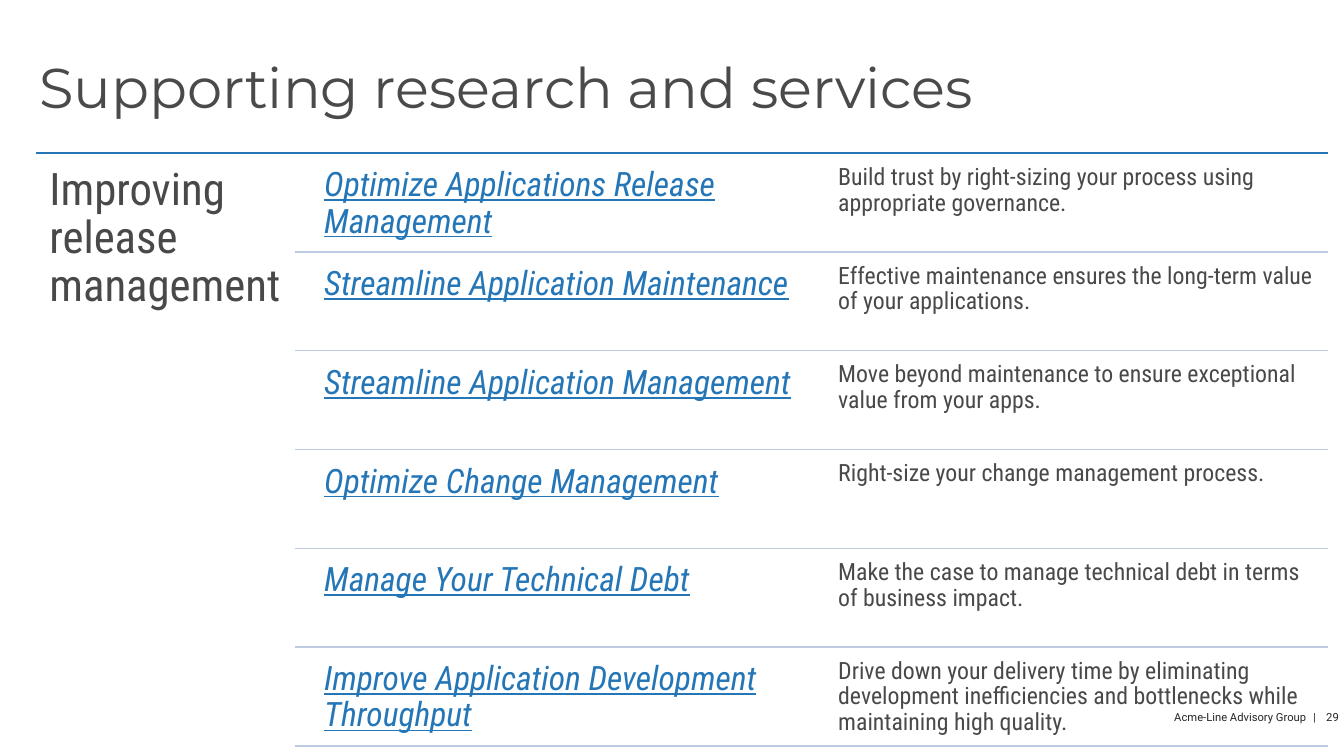
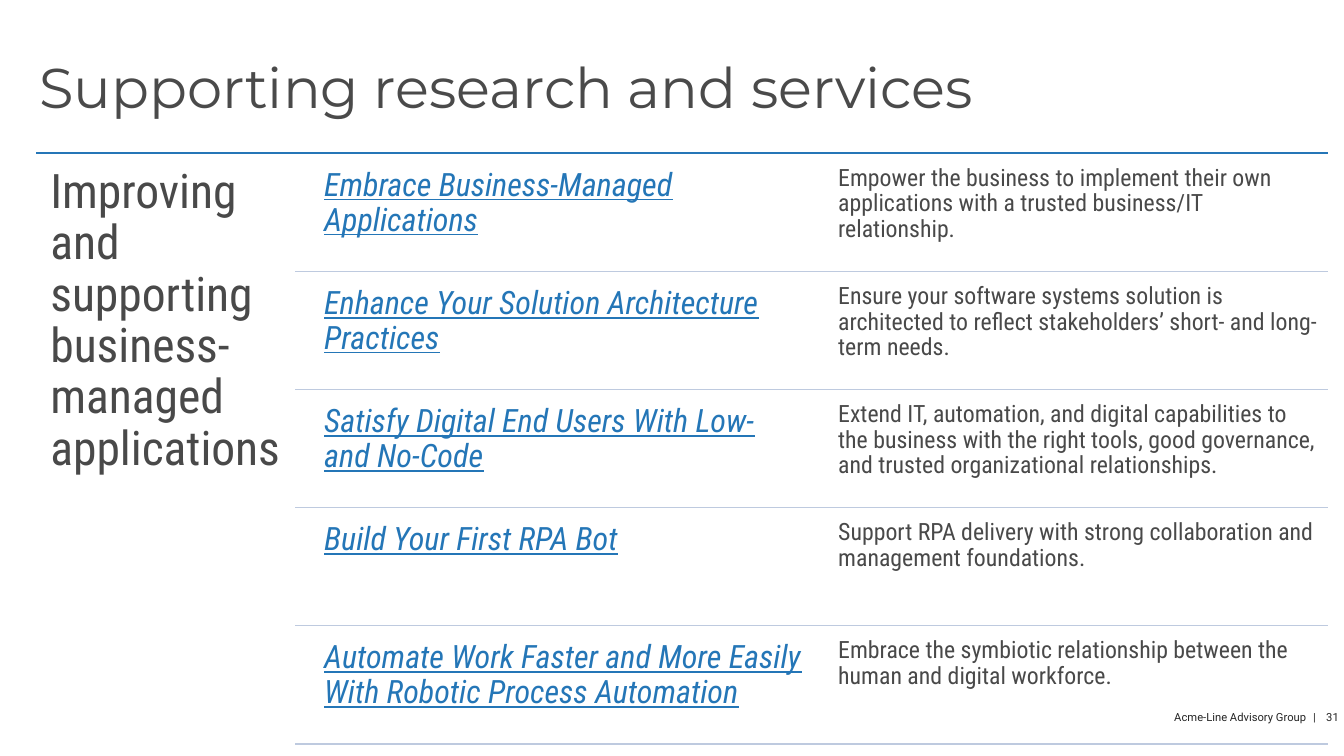
from dataclasses import dataclass

from lxml.etree import SubElement
from pptx import Presentation
from pptx.dml.color import RGBColor as Rgb
from pptx.enum.shapes import MSO_CONNECTOR as Connector
from pptx.enum.text import MSO_ANCHOR as Anchor, MSO_AUTO_SIZE as AutoSize, PP_ALIGN as Align
from pptx.oxml.ns import qn
from pptx.util import Inches, Pt


@dataclass(frozen=True)
class Theme:
    title_ink: Rgb = Rgb.from_string("4A4A4A")
    body_ink: Rgb = Rgb.from_string("494949")
    link_ink: Rgb = Rgb.from_string("2476B7")
    footer_ink: Rgb = Rgb.from_string("242424")
    top_rule: Rgb = Rgb.from_string("2576B7")
    row_rule: Rgb = Rgb.from_string("BECADF")
    title_font: str = "Montserrat"
    body_font: str = "Roboto Condensed"
    footer_font: str = "Roboto"
    title_size: int = 40
    summary_size: int = 17
    footer_size: int = 8
    rule_width: int = 1


theme = Theme()

PAGE_W, PAGE_H = 13.34, 7.5
GRID_LEFT, GRID_TOP, GRID_W = 0.36, 1.52, 12.82
GRID_RIGHT = GRID_LEFT + GRID_W
TOPIC_W = GRID_W * 0.2
ROWS_LEFT = 2.93
LINK_LEFT, SUMMARY_LEFT, ENTRY_W = 3.12, 8.25, 4.94
ROW_GAP_SHARE = 0.045

TITLE = "Supporting research and services"
PUBLISHER = "Acme-Line Advisory Group"

pages = [
    {
        "number": 29,
        "topic": "Improving release management",
        "topic_size": 32, "topic_inset": 0.13, "link_size": 24, "pitch": 0.98,
        "entries": [
            ("Optimize Applications Release Management",
             "Build trust by right-sizing your process using appropriate governance."),
            ("Streamline Application Maintenance",
             "Effective maintenance ensures the long-term value of your applications."),
            ("Streamline Application Management",
             "Move beyond maintenance to ensure exceptional value from your apps."),
            ("Optimize Change Management",
             "Right-size your change management process."),
            ("Manage Your Technical Debt",
             "Make the case to manage technical debt in terms of business impact."),
            ("Improve Application Development Throughput",
             "Drive down your delivery time by eliminating development inefficiencies "
             "and bottlenecks while maintaining high quality."),
        ],
    },
    {
        "number": 31,
        "topic": "Improving and supporting business-managed applications",
        "topic_size": 34, "topic_inset": 0.14, "link_size": 23, "pitch": 1.172,
        "entries": [
            ("Embrace Business-Managed Applications",
             "Empower the business to implement their own applications with a trusted "
             "business/IT relationship."),
            ("Enhance Your Solution Architecture Practices",
             "Ensure your software systems solution is architected to reflect "
             "stakeholders’ short- and long-term needs."),
            ("Satisfy Digital End Users With Low- and No-Code",
             "Extend IT, automation, and digital capabilities to the business with the "
             "right tools, good governance, and trusted organizational relationships."),
            ("Build Your First RPA Bot",
             "Support RPA delivery with strong collaboration and management foundations."),
            ("Automate Work Faster and More Easily With Robotic Process Automation",
             "Embrace the symbiotic relationship between the human and digital workforce."),
        ],
    },
]


def write(holder, box, pieces, color, inset=0.0, align=Align.LEFT, spacing=0.9, **font):
    for side, length in zip(("left", "top", "width", "height"), box):
        setattr(holder, side, Inches(length))
    frame = holder.text_frame
    layout = {"word_wrap": True, "auto_size": AutoSize.NONE, "vertical_anchor": Anchor.TOP}
    layout |= {f"margin_{side}": Inches(inset) for side in ("left", "top", "right", "bottom")}
    for key, value in layout.items():
        setattr(frame, key, value)
    paragraph = frame.paragraphs[0]
    for key, value in {"alignment": align, "line_spacing": spacing}.items():
        setattr(paragraph, key, value)
    for piece in pieces:
        run = paragraph.add_run()
        run.text = piece
        for key, value in font.items():
            setattr(run.font, key, value)
        run.font.color.rgb = color
    return paragraph


def rule(slide, left, y, color):
    line = slide.shapes.add_connector(
        Connector.STRAIGHT, Inches(left), Inches(y), Inches(GRID_RIGHT), Inches(y))
    line.line.color.rgb = color
    line.line.width = Pt(theme.rule_width)
    SubElement(line._element.spPr, qn("a:effectLst"))


deck = Presentation()
deck.slide_width, deck.slide_height = Inches(PAGE_W), Inches(PAGE_H)
title_only = deck.slide_layouts[5]

for page in pages:
    slide = deck.slides.add_slide(title_only)
    write(slide.shapes.title, (0.39, PAGE_H * 0.08, 12.6, 1.24), [TITLE], theme.title_ink,
          name=theme.title_font, size=Pt(theme.title_size))

    footer = write(slide.shapes.add_textbox(0, 0, 0, 0), (9.63, PAGE_H * 0.94, 3.66, 0.13),
                   [PUBLISHER, " | ", str(page["number"])], theme.footer_ink,
                   align=Align.RIGHT, spacing=1.0,
                   name=theme.footer_font, size=Pt(theme.footer_size))
    footer.runs[1].font._element.set("spc", "270")

    rule(slide, GRID_LEFT, GRID_TOP, theme.top_rule)
    write(slide.shapes.add_textbox(0, 0, 0, 0), (GRID_LEFT, GRID_TOP, TOPIC_W, 5.93),
          [page["topic"]], theme.body_ink, page["topic_inset"],
          name=theme.body_font, size=Pt(page["topic_size"]))

    pitch = page["pitch"]
    gap = pitch * ROW_GAP_SHARE
    for row, (link, summary) in enumerate(page["entries"]):
        row_top = GRID_TOP + row * pitch
        write(slide.shapes.add_textbox(0, 0, 0, 0),
              (LINK_LEFT, row_top + gap, ENTRY_W, pitch - gap), [link], theme.link_ink, 0.1,
              name=theme.body_font, size=Pt(page["link_size"]), italic=True, underline=True)
        write(slide.shapes.add_textbox(0, 0, 0, 0),
              (SUMMARY_LEFT, row_top + gap, ENTRY_W, pitch - gap), [summary], theme.body_ink, 0.07,
              name=theme.body_font, size=Pt(theme.summary_size))
        rule(slide, ROWS_LEFT, row_top + pitch, theme.row_rule)

deck.save("out.pptx")
